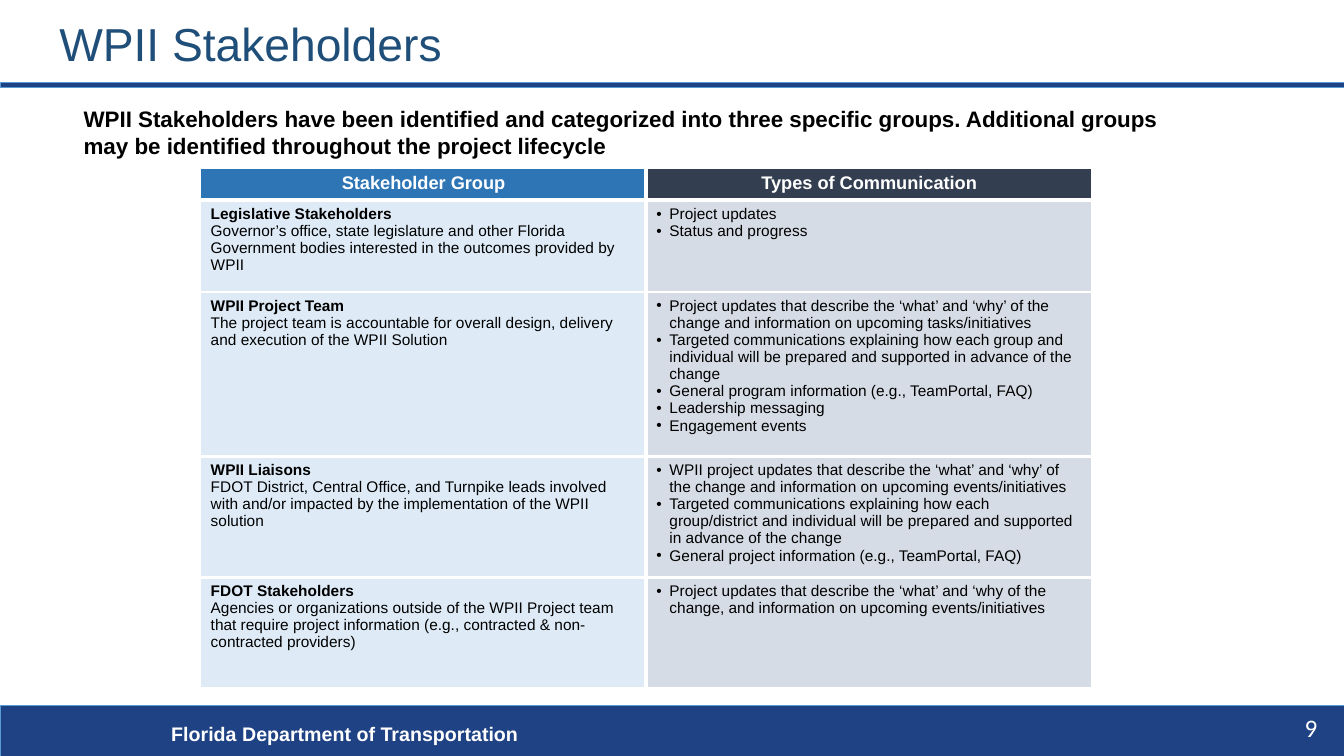
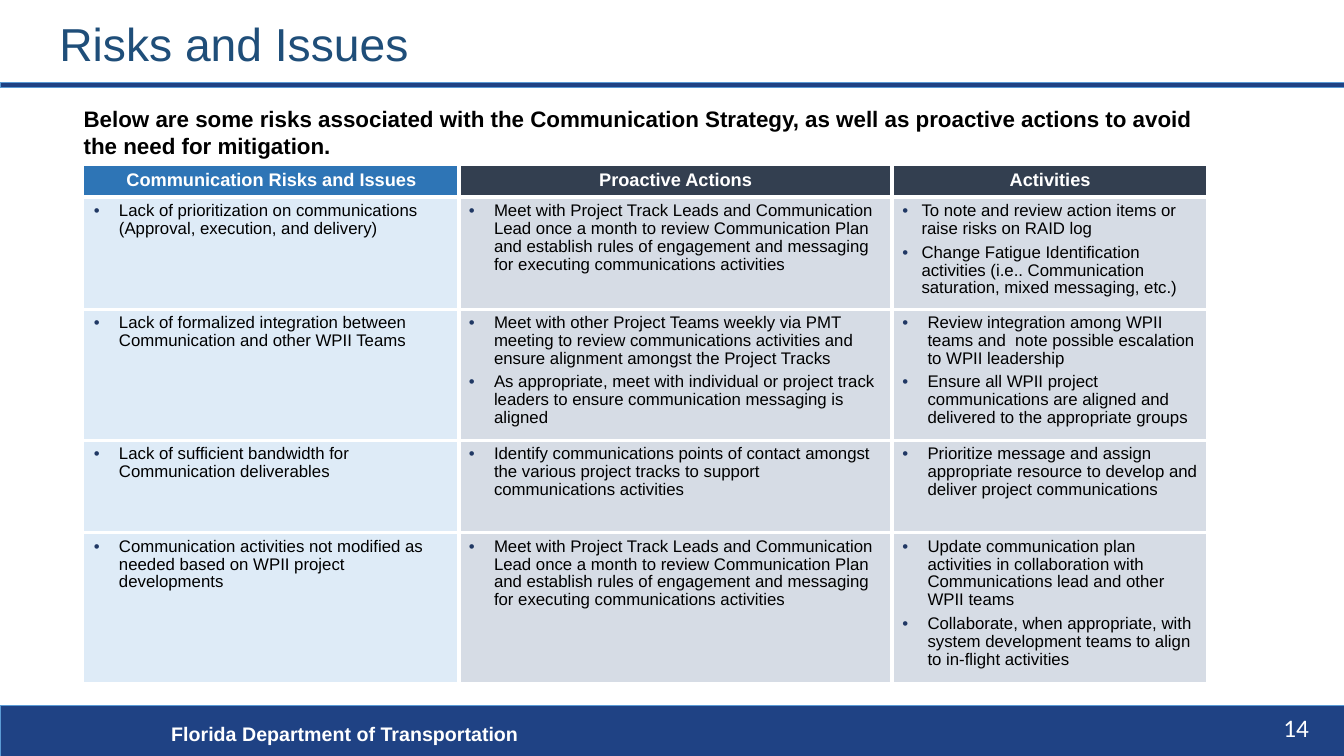
from dataclasses import dataclass

from lxml.etree import SubElement
from pptx import Presentation
from pptx.dml.color import RGBColor
from pptx.enum.shapes import MSO_SHAPE
from pptx.enum.text import MSO_ANCHOR, PP_ALIGN
from pptx.oxml.ns import qn
from pptx.slide import Slide
from pptx.table import _Cell as Slot
from pptx.text.text import TextFrame, _Paragraph as Para
from pptx.util import Emu, Pt

SCALE = 9144
WIDE, HIGH = 1333, 750


@dataclass(frozen=True)
class Theme:
    navy: str = "1F4284"
    edge: str = "5B9BD5"
    title: str = "1F4E79"
    white: str = "FFFFFF"
    black: str = "000000"
    blue: str = "2E75B6"
    slate: str = "333F50"
    pale: str = "DEEBF7"
    grey: str = "D6DCE5"
    mark: str = "203864"
    font: str = "Arial"
    digit: str = "Calibri"
    title_size: int = 33
    lead_size: int = 16
    foot_size: int = 14
    page_size: int = 18
    head_size: int = 13


THEME = Theme()


@dataclass(frozen=True)
class Type:
    size: int
    tint: str
    bold: bool = False
    font: str = THEME.font


@dataclass(frozen=True)
class Box:
    left: int
    top: int
    wide: int
    high: int

    def emu(self) -> tuple[Emu, ...]:
        return tuple(px(n) for n in (self.left, self.top, self.wide, self.high))


@dataclass(frozen=True)
class Cell:
    items: tuple[str, ...]
    dent: int = 0


@dataclass(frozen=True)
class Look:
    size: int
    pitch: float
    gap: float
    mark: str


@dataclass(frozen=True)
class Grid:
    left: int
    top: int
    cols: tuple[int, ...]
    rows: tuple[int, ...]
    downs: tuple[float, ...]
    lines: tuple[float, ...]
    look: Look
    heads: tuple[str, ...]
    body: tuple[tuple[Cell, ...], ...]


@dataclass(frozen=True)
class Page:
    number: str
    title: str
    lead: str
    grid: Grid


def px(count: int) -> Emu:
    return Emu(count * SCALE)


def add_run(para: Para, text: str, kind: Type) -> None:
    run = para.add_run()
    run.text = text
    font = run.font
    font.size, font.name, font.bold = Pt(kind.size), kind.font, kind.bold
    font.color.rgb = RGBColor.from_string(kind.tint)


def add_text(slide: Slide, box: Box, text: str, kind: Type) -> TextFrame:
    frame = slide.shapes.add_textbox(*box.emu()).text_frame
    frame.word_wrap = True
    add_run(frame.paragraphs[0], text, kind)
    return frame


def add_band(slide: Slide, top: int, high: int) -> None:
    band = slide.shapes.add_shape(MSO_SHAPE.RECTANGLE, *Box(0, top, WIDE, high).emu())
    band.shadow.inherit = False
    band.fill.solid()
    band.fill.fore_color.rgb = RGBColor.from_string(THEME.navy)
    band.line.color.rgb = RGBColor.from_string(THEME.edge)
    band.line.width = Pt(0.5)


def add_mark(para: Para, dent: int, tint: str) -> None:
    props = para._p.get_or_add_pPr()
    props.set("marL", str(px(dent)))
    props.set("indent", str(px(-dent)))
    SubElement(SubElement(props, qn("a:buClr")), qn("a:srgbClr")).set("val", tint)
    SubElement(props, qn("a:buFont")).set("typeface", THEME.font)
    SubElement(props, qn("a:buChar")).set("char", "•")


def paint(slot: Slot, fill: str, sides: dict[str, float]) -> None:
    props = slot._tc.get_or_add_tcPr()
    for side, width in sides.items():
        line = SubElement(props, qn(f"a:ln{side}"), w=str(Pt(width)))
        solid = SubElement(line, qn("a:solidFill"))
        SubElement(solid, qn("a:srgbClr")).set("val", THEME.white)
    slot.fill.solid()
    slot.fill.fore_color.rgb = RGBColor.from_string(fill)


def fill_head(slot: Slot, text: str) -> None:
    para = slot.text_frame.paragraphs[0]
    para.alignment = PP_ALIGN.CENTER
    add_run(para, text, Type(THEME.head_size, THEME.white, True))


def fill_body(slot: Slot, cell: Cell, look: Look) -> None:
    frame = slot.text_frame
    for at, text in enumerate(cell.items):
        para = frame.add_paragraph() if at else frame.paragraphs[0]
        para.line_spacing = look.pitch
        if at and look.gap:
            para.space_before = Pt(look.gap)
        if cell.dent:
            add_mark(para, cell.dent, look.mark)
        bold = not cell.dent and at == 0
        add_run(para, text, Type(look.size, THEME.black, bold))


def add_grid(slide: Slide, grid: Grid) -> None:
    box = Box(grid.left, grid.top, sum(grid.cols), sum(grid.rows))
    table = slide.shapes.add_table(len(grid.rows), len(grid.cols), *box.emu()).table
    table.horz_banding = False
    for col, wide in zip(table.columns, grid.cols):
        col.width = px(wide)
    for row, high in zip(table.rows, grid.rows):
        row.height = px(high)
    for y in range(len(grid.rows)):
        for x in range(len(grid.cols)):
            slot = table.cell(y, x)
            sides = {"L": grid.downs[x], "R": grid.downs[x + 1],
                     "T": grid.lines[y], "B": grid.lines[y + 1]}
            if y == 0:
                paint(slot, THEME.slate if x else THEME.blue, sides)
                fill_head(slot, grid.heads[x])
            else:
                paint(slot, THEME.grey if x else THEME.pale, sides)
                fill_body(slot, grid.body[y - 1][x], grid.look)


def add_frame(slide: Slide, page: Page) -> None:
    add_band(slide, 700, 50)
    add_text(slide, Box(160, 711, 798, 34), "Florida Department of Transportation",
             Type(THEME.foot_size, THEME.white, True))
    add_band(slide, 82, 5)
    title = add_text(slide, Box(49, 10, 1150, 72), page.title,
                     Type(THEME.title_size, THEME.title))
    title.vertical_anchor = MSO_ANCHOR.MIDDLE
    title.paragraphs[0].line_spacing = 0.9
    lead = add_text(slide, Box(83, 104, 1116, 514), page.lead,
                    Type(THEME.lead_size, THEME.black, True))
    lead.margin_left = lead.margin_top = lead.margin_right = lead.margin_bottom = 0


def add_page(slide: Slide, page: Page) -> None:
    add_frame(slide, page)
    add_grid(slide, page.grid)
    wide = 7 + 21 * len(page.number)
    add_text(slide, Box(1312 - wide, 702, wide, 40), page.number,
             Type(THEME.page_size, THEME.white, font=THEME.digit))


def group(name: str, text: str) -> Cell:
    return Cell((name, text))


def short(*items: str) -> Cell:
    return Cell(items, 13)


def mid(*items: str) -> Cell:
    return Cell(items, 19)


def long(*items: str) -> Cell:
    return Cell(items, 25)


REVIEW = long("Meet with Project Track Leads and Communication Lead once a month to review "
              "Communication Plan and establish rules of engagement and messaging for "
              "executing communications activities")

GROUPS = Grid(
    199, 167, (442, 442), (31, 91, 163, 118, 110),
    (1, 3, 1), (1, 3, 1, 2.25, 2.25, 2.25),
    Look(11, 1.0, 0, THEME.black),
    ("Stakeholder Group", "Types of Communication"),
    (
        (group("Legislative Stakeholders",
               "Governor’s office, state legislature and other Florida Government bodies "
               "interested in the outcomes provided by WPII"),
         short("Project updates", "Status and progress")),
        (group("WPII Project Team",
               "The project team is accountable for overall design, delivery and execution "
               "of the WPII Solution"),
         short("Project updates that describe the ‘what’ and ‘why’ of the change and "
               "information on upcoming tasks/initiatives",
               "Targeted communications explaining how each group and individual will be "
               "prepared and supported in advance of the change",
               "General program information (e.g., TeamPortal, FAQ)",
               "Leadership messaging", "Engagement events")),
        (group("WPII Liaisons",
               "FDOT District, Central Office, and Turnpike leads involved with and/or "
               "impacted by the implementation of the WPII solution"),
         short("WPII project updates that describe the ‘what’ and ‘why’ of the change and "
               "information on upcoming events/initiatives",
               "Targeted communications explaining how each group/district and individual "
               "will be prepared and supported in advance of the change",
               "General project information (e.g., TeamPortal, FAQ)")),
        (group("FDOT Stakeholders",
               "Agencies or organizations outside of the WPII Project team that require "
               "project information (e.g., contracted & non-contracted providers)"),
         short("Project updates that describe the ‘what’ and ‘why of the change, and "
               "information on upcoming events/initiatives")),
    ))

RISKS = Grid(
    83, 164, (372, 430, 313), (27, 96, 112, 92, 129),
    (1, 3, 3, 3), (1, 3, 2.25, 2.25, 2.25, 2.25),
    Look(12, 0.95, 4.2, THEME.mark),
    ("Communication Risks and Issues", "Proactive Actions", "Activities"),
    (
        (long("Lack of prioritization on communications (Approval, execution, and delivery)"),
         REVIEW,
         mid("To note and review action items or raise risks on RAID log",
             "Change Fatigue Identification activities (i.e.. Communication saturation, "
             "mixed messaging, etc.)")),
        (long("Lack of formalized integration between Communication and other WPII Teams"),
         long("Meet with other Project Teams weekly via PMT meeting to review communications "
              "activities and ensure alignment amongst the Project Tracks",
              "As appropriate, meet with individual or project track leaders to ensure "
              "communication messaging is aligned"),
         long("Review integration among WPII teams and  note possible escalation to WPII "
              "leadership",
              "Ensure all WPII project communications are aligned and delivered to the "
              "appropriate groups")),
        (long("Lack of sufficient bandwidth for Communication deliverables"),
         long("Identify communications points of contact amongst the various project tracks "
              "to support communications activities"),
         long("Prioritize message and assign appropriate resource to develop and deliver "
              "project communications")),
        (long("Communication activities not modified as needed based on WPII project "
              "developments"),
         REVIEW,
         long("Update communication plan activities in collaboration with Communications "
              "lead and other WPII teams",
              "Collaborate, when appropriate, with system development teams to align to "
              "in-flight activities")),
    ))

PAGES = (
    Page("9", "WPII Stakeholders",
         "WPII Stakeholders have been identified and categorized into three specific groups. "
         "Additional groups may be identified throughout the project lifecycle", GROUPS),
    Page("14", "Risks and Issues",
         "Below are some risks associated with the Communication Strategy, as well as "
         "proactive actions to avoid the need for mitigation.", RISKS),
)


def main() -> None:
    deck = Presentation()
    deck.slide_width, deck.slide_height = px(WIDE), px(HIGH)
    for page in PAGES:
        add_page(deck.slides.add_slide(deck.slide_layouts[6]), page)
    deck.save("out.pptx")


if __name__ == "__main__":
    main()
